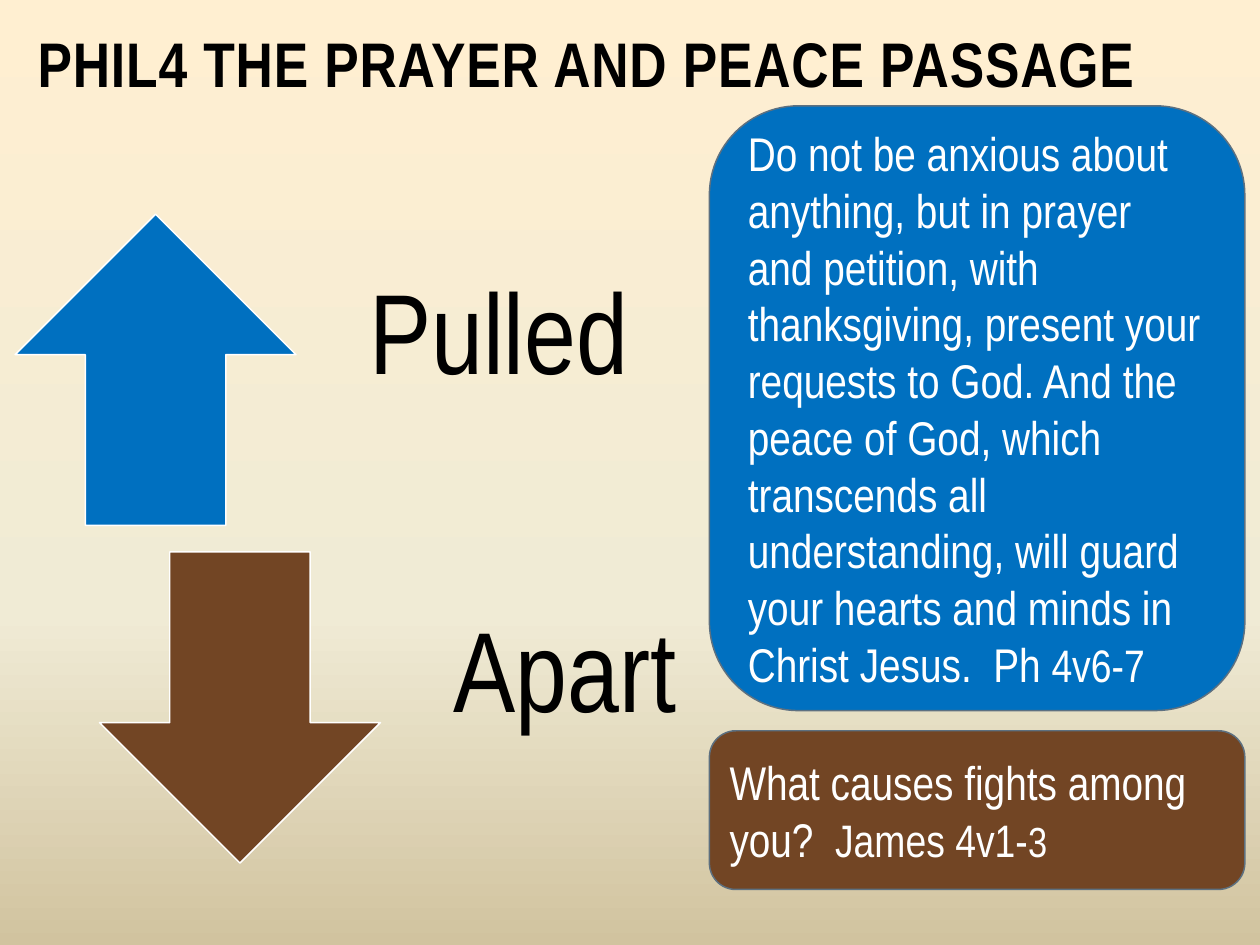
from dataclasses import dataclass

from lxml.etree import SubElement
from pptx import Presentation
from pptx.dml.color import RGBColor
from pptx.enum.shapes import MSO_SHAPE
from pptx.enum.text import MSO_ANCHOR, PP_ALIGN
from pptx.oxml.ns import qn
from pptx.util import Emu, Pt

EMU_PER_PX = 9144
FONT = "Arial Narrow"
BLACK = RGBColor(0x00, 0x00, 0x00)
WHITE = RGBColor(0xFF, 0xFF, 0xFF)
BLUE = RGBColor(0x00, 0x70, 0xC0)
BROWN = RGBColor(0x72, 0x45, 0x24)
SLATE = RGBColor(0x5D, 0x70, 0x80)
BACKGROUND_STOPS = (
    (0, RGBColor(0xFF, 0xEF, 0xD1)),
    (65, RGBColor(0xF0, 0xEB, 0xD5)),
    (100, RGBColor(0xD1, 0xC3, 0x9F)),
)


@dataclass(frozen=True)
class Box:
    left: int
    top: int
    width: int
    height: int

    def emu(self) -> tuple:
        return tuple(px(n) for n in (self.left, self.top, self.width, self.height))


@dataclass(frozen=True)
class Direction:
    word: str
    preset: MSO_SHAPE
    color: RGBColor
    left: int
    top: int


@dataclass(frozen=True)
class Verse:
    box: Box
    color: RGBColor
    runs: tuple


DIRECTIONS = (
    Direction("Pulled", MSO_SHAPE.UP_ARROW, BLUE, 12, 170),
    Direction("Apart", MSO_SHAPE.DOWN_ARROW, BROWN, 79, 438),
)
VERSES = (
    Verse(
        Box(563, 580, 425, 126),
        BROWN,
        (("What causes fights among you?  ", 27), ("James 4v1-", 26), ("3", 24)),
    ),
    Verse(
        Box(563, 84, 425, 480),
        BLUE,
        (
            (
                "Do not be anxious about anything, but in prayer and petition, "
                "with thanksgiving, present your requests to God. And the peace "
                "of God, which transcends all understanding, will guard your "
                "hearts and minds in Christ Jesus.  Ph ",
                27,
            ),
            ("4v6-7", 26),
        ),
    ),
)


def px(length: int) -> Emu:
    return Emu(length * EMU_PER_PX)


def paint_background(slide) -> None:
    fill = slide.background.fill
    fill.gradient()
    fill.gradient_angle = 270
    stop_list = next(slide.element.iter(qn("a:gsLst")))
    for stop in list(stop_list):
        stop_list.remove(stop)
    for percent, color in BACKGROUND_STOPS:
        stop = SubElement(stop_list, qn("a:gs"), pos=str(percent * 1000))
        SubElement(stop, qn("a:srgbClr"), val=str(color))


def add_filled_shape(slide, preset: MSO_SHAPE, box: Box, color: RGBColor, outline: RGBColor):
    shape = slide.shapes.add_shape(preset, *box.emu())
    shape.shadow.inherit = False
    shape.fill.solid()
    shape.fill.fore_color.rgb = color
    shape.line.color.rgb = outline
    shape.line.width = Pt(0.85)
    return shape


def write_runs(shape, runs: tuple, color: RGBColor, anchor: MSO_ANCHOR):
    frame = shape.text_frame
    frame.word_wrap = True
    frame.vertical_anchor = anchor
    paragraph = frame.paragraphs[0]
    paragraph.alignment = PP_ALIGN.LEFT
    paragraph.font.name = FONT
    paragraph.font.color.rgb = color
    for text, size in runs:
        run = paragraph.add_run()
        run.text = text
        run.font.size = Pt(size)
    return paragraph


def add_title(slide, text: str) -> None:
    title = slide.shapes.add_textbox(*Box(20, -3, 921, 87).emu())
    paragraph = write_runs(title, ((text, 36),), BLACK, MSO_ANCHOR.BOTTOM)
    paragraph.font.bold = True
    paragraph.runs[0].font._element.set("spc", "50")


def add_direction(slide, direction: Direction) -> None:
    arrow_box = Box(direction.left, direction.top, 223, 247)
    add_filled_shape(slide, direction.preset, arrow_box, direction.color, WHITE)
    label_box = Box(direction.left + 230, direction.top, 379, 247)
    label = slide.shapes.add_textbox(*label_box.emu())
    frame = label.text_frame
    frame.margin_left = frame.margin_right = frame.margin_bottom = px(51)
    frame.margin_top = 0
    paragraph = write_runs(label, ((direction.word, 65),), BLACK, MSO_ANCHOR.MIDDLE)
    paragraph.line_spacing = 0.9


def add_verse(slide, verse: Verse) -> None:
    shape = add_filled_shape(
        slide, MSO_SHAPE.ROUNDED_RECTANGLE, verse.box, verse.color, SLATE
    )
    write_runs(shape, verse.runs, WHITE, MSO_ANCHOR.MIDDLE)


def main() -> None:
    presentation = Presentation()
    presentation.slide_width = px(1000)
    presentation.slide_height = px(750)
    slide = presentation.slides.add_slide(presentation.slide_layouts[6])
    paint_background(slide)
    add_title(slide, "PHIL4 THE PRAYER AND PEACE PASSAGE")
    for direction in DIRECTIONS:
        add_direction(slide, direction)
    for verse in VERSES:
        add_verse(slide, verse)
    presentation.save("out.pptx")


if __name__ == "__main__":
    main()
